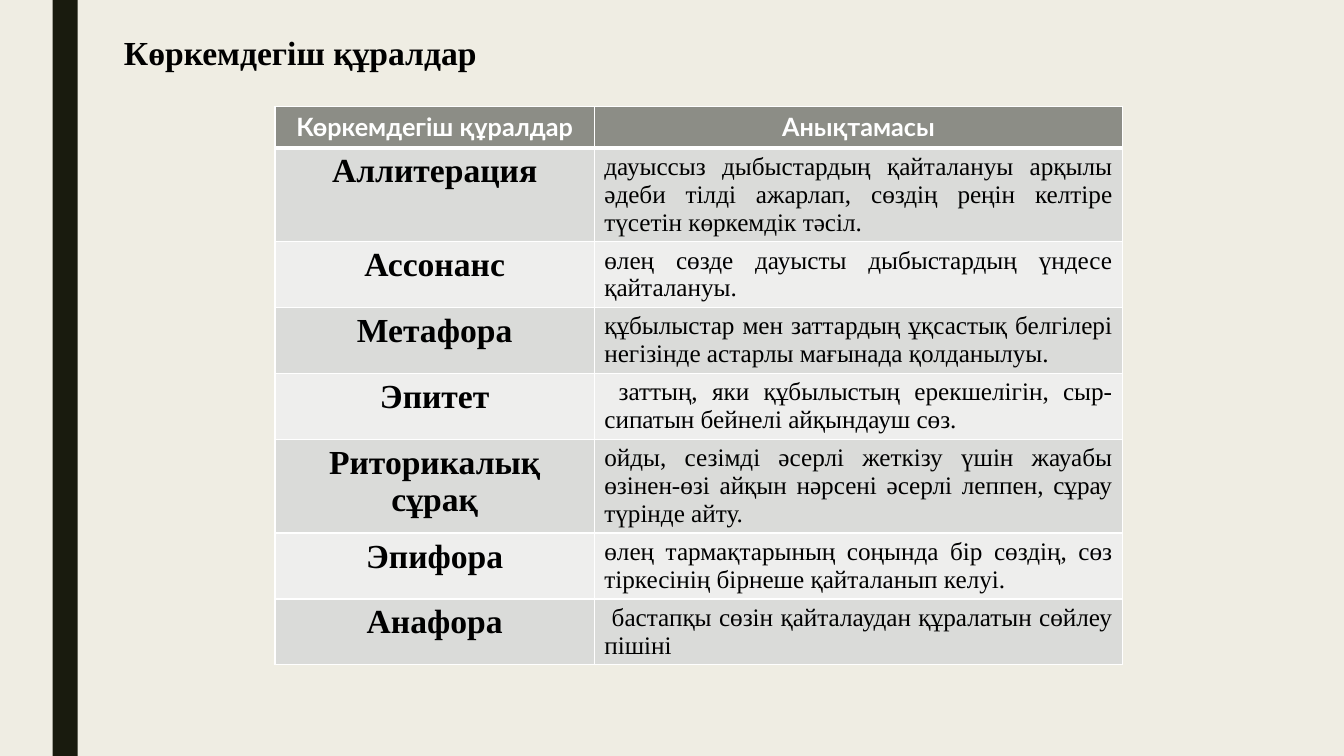
import pptx
import pptx.dml.color
import pptx.enum.shapes
import pptx.enum.text
import pptx.oxml
import pptx.oxml.ns
import pptx.util

Pt = pptx.util.Pt
ALIGN = pptx.enum.text.PP_ALIGN
HEAD = ("Көркемдегіш құралдар", "Анықтамасы")
TERMS = [
    ("Аллитерация", "дауыссыз дыбыстардың қайталануы арқылы әдеби тілді ажарлап, "
     "сөздің реңін келтіре түсетін көркемдік тәсіл."),
    ("Ассонанс", "өлең сөзде дауысты дыбыстардың үндесе қайталануы."),
    ("Метафора", "құбылыстар мен заттардың ұқсастық белгілері негізінде "
     "астарлы мағынада қолданылуы."),
    ("Эпитет", " заттың, яки құбылыстың ерекшелігін, сыр-сипатын бейнелі айқындауш сөз."),
    ("Риторикалық сұрақ", "ойды, сезімді әсерлі жеткізу үшін жауабы өзінен-өзі айқын "
     "нәрсені әсерлі леппен, сұрау түрінде айту."),
    ("Эпифора", "өлең тармақтарының соңында бір сөздің, сөз тіркесінің бірнеше "
     "қайталанып келуі."),
    ("Анафора", " бастапқы сөзін қайталаудан құралатын сөйлеу пішіні"),
]


class Deck:
    """Holds the style and the current slide, and draws each kind of element."""

    hues = {"back": "EFEDE3", "bar": "191B0E", "head": "8C8D86", "odd": "DADBD9",
            "even": "EEEEED", "ink": "000000", "white": "FFFFFF"}
    serif = "Times New Roman"
    sans = "Lato"

    def __init__(self):
        self.show = pptx.Presentation()
        self.show.slide_width, self.show.slide_height = Pt(960), Pt(540)
        self.slide = self.show.slides.add_slide(self.show.slide_layouts[6])
        self.paint(self.slide.background.fill, "back")

    def hue(self, name):
        return pptx.dml.color.RGBColor.from_string(self.hues[name])

    def paint(self, fill, name):
        fill.solid()
        fill.fore_color.rgb = self.hue(name)

    def label(self, frame, text, size, align, bold=True, face=serif, tint="ink"):
        para = frame.paragraphs[0]
        para.text = text
        para.alignment = align
        font = para.font
        font.name, font.size, font.bold = face, Pt(size), bold
        font.color.rgb = self.hue(tint)
        return para

    def bar(self, left, top, width, height):
        kind = pptx.enum.shapes.MSO_SHAPE.RECTANGLE
        shape = self.slide.shapes.add_shape(kind, Pt(left), Pt(top), Pt(width), Pt(height))
        shape.shadow.inherit = False
        self.paint(shape.fill, "bar")
        shape.line.fill.background()

    def title(self, text, left, top, width, height):
        box = self.slide.shapes.add_textbox(Pt(left), Pt(top), Pt(width), Pt(height))
        box.text_frame.word_wrap = True
        para = self.label(box.text_frame, text, 24, ALIGN.JUSTIFY)
        para.line_spacing = 1.09
        para.space_after = Pt(10)

    def edge(self, cell, base):
        props = cell._tc.get_or_add_tcPr()
        space = pptx.oxml.ns.nsdecls("a")
        sides = {"L": 1, "R": 1, "T": 1, "B": base}
        for spot, (side, width) in enumerate(sides.items()):
            props.insert(spot, pptx.oxml.parse_xml(
                f'<a:ln{side} {space} w="{Pt(width)}"><a:solidFill>'
                f'<a:srgbClr val="{self.hues["white"]}"/></a:solidFill></a:ln{side}>'))

    def table(self, head, rows, left, top, widths, height):
        count = len(rows) + 1
        grid = self.slide.shapes.add_table(
            count, len(widths), Pt(left), Pt(top), Pt(sum(widths)), Pt(height * count)).table
        for col, width in zip(grid.columns, widths):
            col.width = Pt(width)
        for r, texts in enumerate([head, *rows]):
            grid.rows[r].height = Pt(height)
            for c, text in enumerate(texts):
                cell = grid.cell(r, c)
                self.paint(cell.fill, "head" if r == 0 else "odd" if r % 2 else "even")
                self.edge(cell, 3 if r == 0 else 1)
                frame = cell.text_frame
                if r == 0:
                    self.label(frame, text, 18, ALIGN.CENTER, face=self.sans, tint="white")
                elif c == 0:
                    self.label(frame, text, 24, ALIGN.CENTER)
                else:
                    self.label(frame, text, 18, ALIGN.JUSTIFY, bold=False)


def main():
    deck = Deck()
    deck.bar(37.5, 0, 18, 540)
    deck.table(HEAD, TERMS, 196.5, 76, (228, 377.5), 29.5)
    deck.title("Көркемдегіш құралдар", 81.5, 17, 803.5, 39)
    deck.show.save("out.pptx")


if __name__ == "__main__":
    main()
